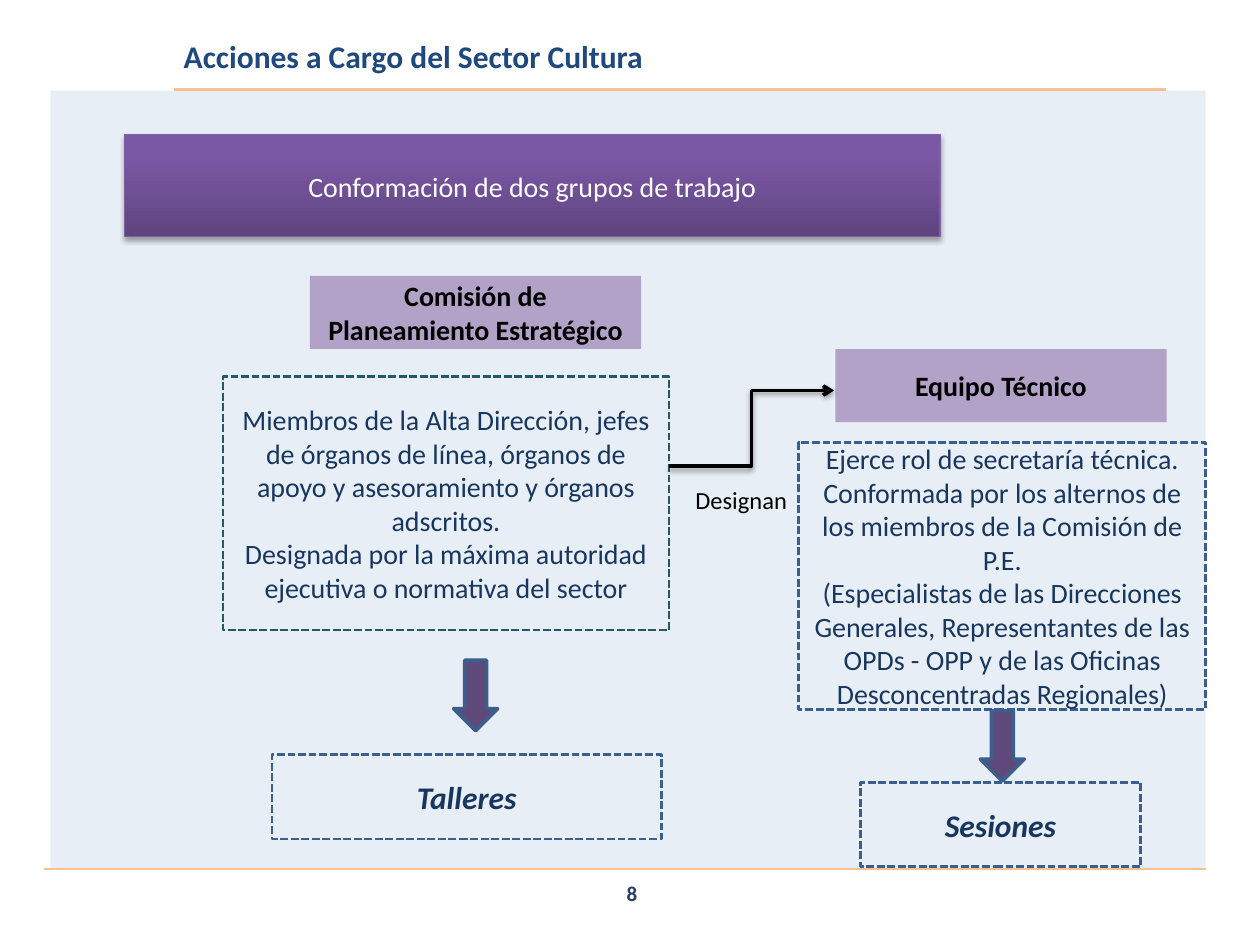
import pptx
import pptx.util
from lxml import etree
from pptx.dml.color import RGBColor
from pptx.enum.dml import MSO_LINE
from pptx.enum.shapes import MSO_CONNECTOR, MSO_SHAPE
from pptx.enum.text import MSO_ANCHOR, PP_ALIGN
from pptx.oxml.ns import qn
from pptx.util import Inches, Pt

COLORS = {
    "panel": "4F81BD", "title": "1F497D", "rule": "FAC090",
    "banner_dark": "5F4480", "banner_light": "7B58A6", "banner_line": "7D60A0",
    "heading": "B3A2C7", "arrow": "604A7B", "blue_line": "3A5F8C",
    "teal_line": "215968", "body": "17375E", "number": "254061",
    "black": "000000", "white": "FFFFFF",
}


def rgb(name):
    return RGBColor.from_string(COLORS[name])


def write(shape, text, size=16, color="body", bold=False, italic=False,
          align=PP_ALIGN.CENTER, anchor=MSO_ANCHOR.MIDDLE):
    """Fill a shape with one paragraph for each line of text."""
    tf = shape.text_frame
    tf.word_wrap = True
    tf.vertical_anchor = anchor
    for i, line in enumerate(text.split("\n")):
        p = tf.add_paragraph() if i else tf.paragraphs[0]
        p.alignment = align
        r = p.add_run()
        r.text = line
        r.font.name = "Calibri"
        r.font.size = Pt(size)
        r.font.bold = bold
        r.font.italic = italic
        r.font.color.rgb = rgb(color)


def set_effects(shape, shadow_alpha=None, distance=0):
    """Replace the theme effects by none, or by a soft shadow straight below."""
    sp_pr = shape._element.spPr
    for old in sp_pr.findall(qn("a:effectLst")):
        sp_pr.remove(old)
    effects = etree.SubElement(sp_pr, qn("a:effectLst"))
    if shadow_alpha:
        shadow = etree.SubElement(
            effects, qn("a:outerShdw"), blurRad=str(Pt(3.1)),
            dist=str(Pt(distance)), dir="5400000", rotWithShape="0")
        clr = etree.SubElement(shadow, qn("a:srgbClr"), val=COLORS["black"])
        etree.SubElement(clr, qn("a:alpha"), val=str(shadow_alpha * 1000))


def add_box(s, x, y, w, h, fill=None, line=None, width=1.5, dash=None,
            kind=MSO_SHAPE.RECTANGLE):
    sp = s.shapes.add_shape(kind, Inches(x), Inches(y), Inches(w), Inches(h))
    sp.shadow.inherit = False
    if fill:
        sp.fill.solid()
        sp.fill.fore_color.rgb = rgb(fill)
    else:
        sp.fill.background()
    if line:
        sp.line.color.rgb = rgb(line)
        sp.line.width = Pt(width)
        if dash:
            sp.line.dash_style = dash
    else:
        sp.line.fill.background()
    return sp


def add_panel(s):
    sp = add_box(s, 0.4, 0.72, 9.17, 6.18, fill="panel")
    clr = sp._element.spPr.find(qn("a:solidFill")).find(qn("a:srgbClr"))
    etree.SubElement(clr, qn("a:alpha"), val="13000")


def add_banner(s, text):
    sp = add_box(s, 0.99, 1.07, 6.47, 0.81, line="banner_line", width=0.75)
    sp.fill.gradient()
    sp.fill.gradient_angle = 90
    stops = zip(sp.fill.gradient_stops, (0, 0.8), ("banner_dark", "banner_light"))
    for stop, position, color in stops:
        stop.position = position
        stop.color.rgb = rgb(color)
    set_effects(sp, shadow_alpha=35, distance=1.8)
    write(sp, text, color="white")


def add_heading(s, x, y, text):
    write(add_box(s, x, y, 2.63, 0.58, fill="heading"), text,
          color="black", bold=True)


def add_dashed(s, x, y, w, h, text, line="blue_line", **fmt):
    sp = add_box(s, x, y, w, h, line=line, dash=MSO_LINE.SQUARE_DOT)
    sp.line._get_or_add_ln().find(qn("a:prstDash")).set("val", "sysDash")
    write(sp, text, **fmt)


def add_down_arrow(s, x, y):
    add_box(s, x, y, 0.35, 0.56, fill="arrow", line="blue_line", width=2,
            kind=MSO_SHAPE.DOWN_ARROW)


def add_label(s, x, y, w, h, text, **fmt):
    write(s.shapes.add_textbox(Inches(x), Inches(y), Inches(w), Inches(h)),
          text, **fmt)


def add_line(s, x1, y1, x2, y2, color="rule", width=1.25,
             kind=MSO_CONNECTOR.STRAIGHT):
    cx = s.shapes.add_connector(kind, Inches(x1), Inches(y1),
                                Inches(x2), Inches(y2))
    cx.line.color.rgb = rgb(color)
    cx.line.width = Pt(width)
    set_effects(cx)
    return cx


def add_elbow_arrow(s, x1, y1, x2, y2):
    cx = add_line(s, x1, y1, x2, y2, "black", 2, MSO_CONNECTOR.ELBOW)
    etree.SubElement(cx.line._get_or_add_ln(), qn("a:tailEnd"), type="arrow")
    set_effects(cx, shadow_alpha=38, distance=1.6)


def main():
    prs = pptx.Presentation()
    prs.slide_width, prs.slide_height = Inches(10), Inches(7.5)
    s = prs.slides.add_slide(prs.slide_layouts[6])

    add_panel(s)
    add_label(s, 1.36, 0.21, 8.11, 0.47, "Acciones a Cargo del Sector Cultura",
              size=18, color="title", bold=True, align=PP_ALIGN.LEFT)
    add_line(s, 1.38, 0.71, 9.25, 0.71)
    add_banner(s, "Conformación de dos grupos de trabajo")
    add_line(s, 0.35, 6.9, 9.57, 6.9)
    add_label(s, 3.85, 6.89, 2.33, 0.4, "8", size=12, color="number", bold=True)

    add_heading(s, 2.46, 2.19, "Comisión de Planeamiento Estratégico")
    add_heading(s, 6.63, 2.77, "Equipo Técnico")
    add_dashed(s, 6.34, 3.51, 3.23, 2.12,
               "Ejerce rol de secretaría técnica.\n"
               "Conformada por los alternos de los miembros de la Comisión de P.E.\n"
               "(Especialistas de las Direcciones Generales, Representantes de las "
               "OPDs - OPP y de las Oficinas Desconcentradas Regionales)")
    add_dashed(s, 1.77, 2.99, 3.54, 2.01,
               "Miembros de la Alta Dirección, jefes de órganos de línea, órganos "
               "de apoyo y asesoramiento y órganos adscritos.\n"
               "Designada por la máxima autoridad ejecutiva o normativa del sector",
               line="teal_line")

    outcome = {"size": 18, "bold": True, "italic": True}
    add_dashed(s, 6.83, 6.21, 2.22, 0.67, "Sesiones", **outcome)
    add_down_arrow(s, 7.78, 5.64)
    add_dashed(s, 2.16, 5.99, 3.09, 0.67, "Talleres", **outcome)
    add_down_arrow(s, 3.6, 5.24)

    add_elbow_arrow(s, 5.31, 3.7, 6.62, 3.1)
    add_label(s, 5.42, 3.8, 1.05, 0.34, "Designan", size=14, color="black",
              align=PP_ALIGN.LEFT, anchor=MSO_ANCHOR.TOP)

    prs.save("out.pptx")


if __name__ == "__main__":
    main()
